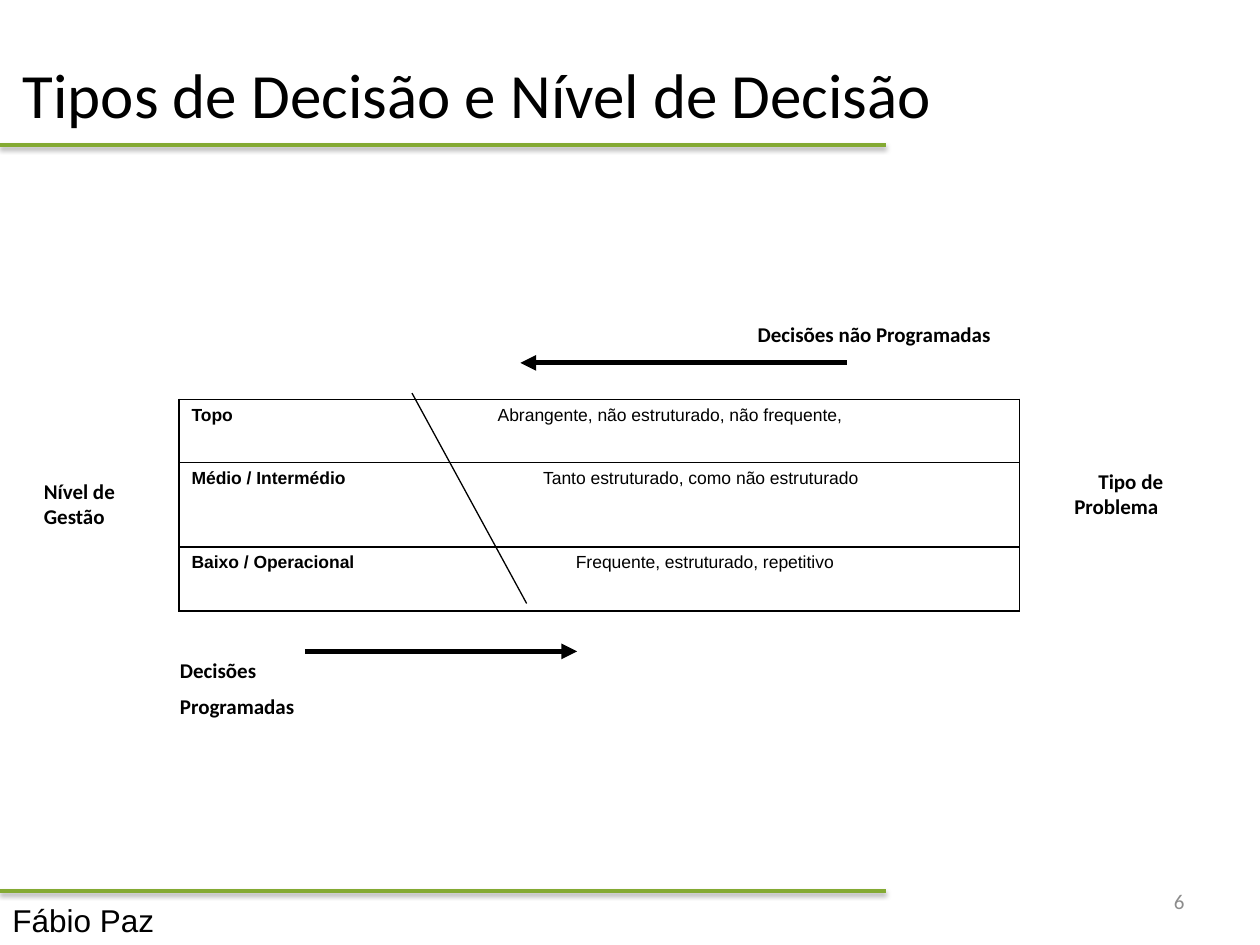
from lxml.etree import SubElement
from pptx import Presentation
from pptx.dml.color import RGBColor
from pptx.enum.shapes import MSO_CONNECTOR
from pptx.enum.text import MSO_ANCHOR, PP_ALIGN
from pptx.oxml import parse_xml
from pptx.oxml.ns import nsdecls, qn
from pptx.util import Inches, Pt

BLACK, GREEN, GREY = "000000", "84AA33", "8C8C8C"


def style(run, size, bold=False, face="Calibri", color=BLACK):
    run.font.name = face
    run.font.size = Pt(size)
    run.font.bold = bold
    run.font.color.rgb = RGBColor.from_string(color)


prs = Presentation()
prs.slide_width, prs.slide_height = Inches(10), Inches(7.5)
slide = prs.slides.add_slide(prs.slide_layouts[5])
shapes = slide.shapes

title = shapes.title
title.left, title.top = Inches(0.08), Inches(0.09)
title.width, title.height = Inches(9), Inches(0.82)
frame = title.text_frame
frame.vertical_anchor = MSO_ANCHOR.MIDDLE
frame.margin_top, frame.margin_bottom = Inches(0.48), 0
para = frame.paragraphs[0]
para.alignment = PP_ALIGN.LEFT
run = para.add_run()
run.text = "Tipos de Decisão e Nível de Decisão"
style(run, 36)

levels = [
    ("Topo", "Abrangente, não estruturado, não frequente,", 0.5, 2.43),
    ("Médio / Intermédio", "Tanto estruturado, como não estruturado", 0.67, 2.79),
    ("Baixo / Operacional", "Frequente, estruturado, repetitivo", 0.51, 3.05),
]
table = shapes.add_table(3, 1, Inches(1.42), Inches(3.17), Inches(6.67), Inches(1.68)).table
table.first_row = table.horz_banding = False
for row, (level, kind, height, stop) in enumerate(levels):
    table.rows[row].height = Inches(height)
    cell = table.cell(row, 0)
    cell.fill.background()
    for spot, side in enumerate("LRTB"):
        edge = parse_xml(
            f'<a:ln{side} {nsdecls("a")} w="12700"><a:solidFill>'
            f'<a:srgbClr val="{BLACK}"/></a:solidFill></a:ln{side}>'
        )
        cell._tc.tcPr.insert(spot, edge)
    para = cell.text_frame.paragraphs[0]
    tabs = SubElement(para._p.get_or_add_pPr(), qn("a:tabLst"))
    SubElement(tabs, qn("a:tab"), pos=str(Inches(stop)), algn="l")
    for text, bold in ((level, True), ("\t" + kind, False)):
        run = para.add_run()
        run.text = text
        style(run, 10, bold, "Arial")

LEFT, RIGHT = PP_ALIGN.LEFT, PP_ALIGN.RIGHT
labels = [
    (5.67, 2.5, 2.33, 0.5, ["Decisões não Programadas "], RIGHT, 12, True, "Calibri", BLACK),
    (1.33, 5.17, 1.33, 0.6, ["Decisões", "Programadas"], LEFT, 12, True, "Calibri", BLACK),
    (0.25, 3.75, 0.92, 0.5, ["Nível de Gestão"], LEFT, 12, True, "Calibri", BLACK),
    (8.33, 3.67, 1, 0.5, ["Tipo de Problema "], RIGHT, 12, True, "Calibri", BLACK),
    (0, 7.1, 9.02, 0.4, ["Fábio Paz"], LEFT, 18, False, "Arial", BLACK),
    (7.17, 6.95, 2.33, 0.4, ["6"], RIGHT, 12, False, "Calibri", GREY),
]
for x, y, w, h, lines, align, size, bold, face, color in labels:
    frame = shapes.add_textbox(Inches(x), Inches(y), Inches(w), Inches(h)).text_frame
    frame.word_wrap = True
    if color == GREY:
        frame.vertical_anchor = MSO_ANCHOR.MIDDLE
    for spot, text in enumerate(lines):
        para = frame.add_paragraph() if spot else frame.paragraphs[0]
        para.alignment = align
        if spot:
            para.space_before = Pt(6)
        run = para.add_run()
        run.text = text
        style(run, size, bold, face, color)

rules = [
    (3.27, 3.12, 4.18, 4.79, BLACK, 0.75, False),
    (6.72, 2.88, 4.13, 2.88, BLACK, 3, True),
    (2.42, 5.17, 4.58, 5.17, BLACK, 3, True),
    (0, 1.15, 7.03, 1.15, GREEN, 2, False),
    (0, 7.07, 7.03, 7.07, GREEN, 2, False),
]
for x1, y1, x2, y2, color, width, arrow in rules:
    rule = shapes.add_connector(
        MSO_CONNECTOR.STRAIGHT, Inches(x1), Inches(y1), Inches(x2), Inches(y2)
    )
    rule.line.color.rgb = RGBColor.from_string(color)
    rule.line.width = Pt(width)
    if arrow:
        SubElement(rule.line._get_or_add_ln(), qn("a:tailEnd"), type="triangle")
    effect = SubElement(rule._element.spPr, qn("a:effectLst"))
    if color == GREEN:
        shade = SubElement(
            effect, qn("a:outerShdw"), blurRad=str(Pt(3.1)), dist=str(Pt(1.6)),
            dir="5400000", rotWithShape="0",
        )
        tint = SubElement(shade, qn("a:srgbClr"), val=BLACK)
        SubElement(tint, qn("a:alpha"), val="38000")

prs.save("out.pptx")
